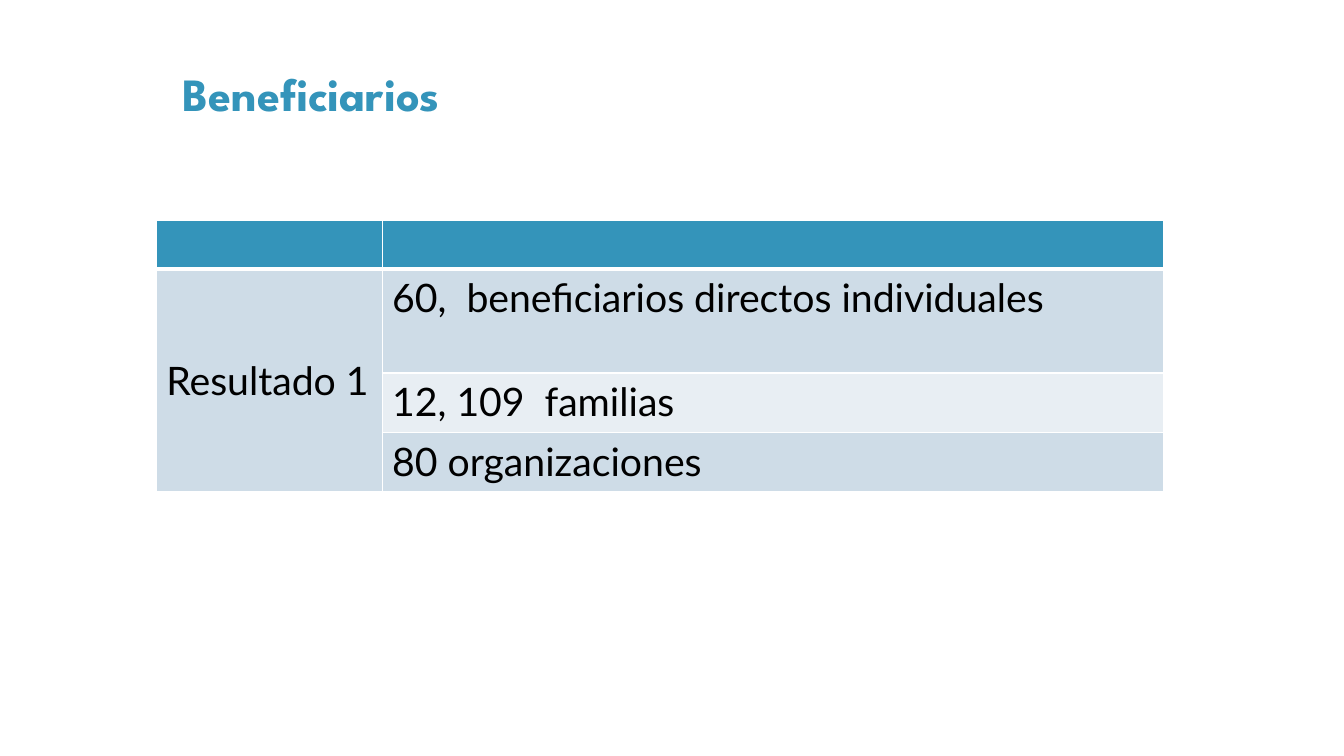
from lxml.etree import SubElement
from pptx import Presentation
from pptx.dml.color import RGBColor
from pptx.enum.shapes import MSO_SHAPE as Shape
from pptx.enum.text import MSO_ANCHOR as Anchor, PP_ALIGN as Align
from pptx.oxml.ns import qn
from pptx.util import Inches, Pt

TEAL = RGBColor(0x34, 0x94, 0xBA)
BAND_DARK = RGBColor(0xCE, 0xDC, 0xE7)
BAND_LIGHT = RGBColor(0xE8, 0xEE, 0xF3)
BLACK = RGBColor(0, 0, 0)
WHITE = RGBColor(0xFF, 0xFF, 0xFF)

GRID = 100  # columns and rows across the slide
THIN, THICK = Pt(1), Pt(3)

BENEFICIARIES = [
    "60,  beneficiarios directos individuales",
    "12, 109  familias",
    "80 organizaciones",
]


class SlideBuilder:
    title_format = {"name": "League Spartan", "size": Pt(33), "bold": True}
    cell_format = {"name": "Lato", "size": Pt(28), "bold": False}

    def __init__(self, deck):
        self.column = deck.slide_width / GRID
        self.row = deck.slide_height / GRID
        self.page = deck.slides.add_slide(deck.slide_layouts[6])

    def across(self, columns):
        return round(columns * self.column)

    def down(self, rows):
        return round(rows * self.row)

    def place(self, left, top, width, height):
        return self.across(left), self.down(top), self.across(width), self.down(height)

    def add_text(self, frame, text, formats, color, align=Align.LEFT):
        para = frame.paragraphs[0]
        para.alignment = align
        span = para.add_run()
        span.text = text
        for name, value in formats.items():
            setattr(span.font, name, value)
        span.font.color.rgb = color

    def title(self, text, *area):
        box = self.page.shapes.add_shape(Shape.ROUNDED_RECTANGLE, *self.place(*area))
        box.shadow.inherit = False
        box.fill.background()
        box.line.fill.background()
        frame = box.text_frame
        frame.word_wrap = True
        frame.vertical_anchor = Anchor.MIDDLE
        self.add_text(frame, text, self.title_format, TEAL, Align.CENTER)

    def table(self, left, top, widths, heights):
        area = self.place(left, top, sum(widths), sum(heights))
        table = self.page.shapes.add_table(len(heights), len(widths), *area).table
        for column, width in zip(table.columns, widths):
            column.width = self.across(width)
        for row, height in zip(table.rows, heights):
            row.height = self.down(height)
        return table

    def cell(self, cell, fill, text="", anchor=Anchor.TOP, top=THIN, bottom=THIN):
        self.borders(cell, {"lnL": THIN, "lnR": THIN, "lnT": top, "lnB": bottom})
        cell.fill.solid()
        cell.fill.fore_color.rgb = fill
        cell.vertical_anchor = anchor
        if text:
            self.add_text(cell.text_frame, text, self.cell_format, BLACK)

    def borders(self, cell, widths):
        properties = cell._tc.get_or_add_tcPr()
        for side, width in widths.items():
            line = SubElement(properties, qn(f"a:{side}"), w=str(int(width)))
            solid = SubElement(line, qn("a:solidFill"))
            SubElement(solid, qn("a:srgbClr"), val=str(WHITE))


def main():
    deck = Presentation()
    deck.slide_width, deck.slide_height = Inches(13.33), Inches(7.5)
    slide = SlideBuilder(deck)
    slide.title("Beneficiarios", 8.7, 6.93, 28.96, 10.8)

    table = slide.table(11.63, 29.2, [16.8, 58.14], [6.4, 13.73, 7.87, 7.87])
    for column in range(2):
        slide.cell(table.cell(0, column), TEAL, bottom=THICK)
    table.cell(1, 0).merge(table.cell(3, 0))
    for index, text in enumerate(BENEFICIARIES):
        band = BAND_LIGHT if index % 2 else BAND_DARK
        label = "" if index else "Resultado 1"
        top = THIN if index else THICK
        slide.cell(table.cell(index + 1, 0), BAND_DARK, label, Anchor.MIDDLE, top)
        slide.cell(table.cell(index + 1, 1), band, text, top=top)
    deck.save("out.pptx")


if __name__ == "__main__":
    main()
